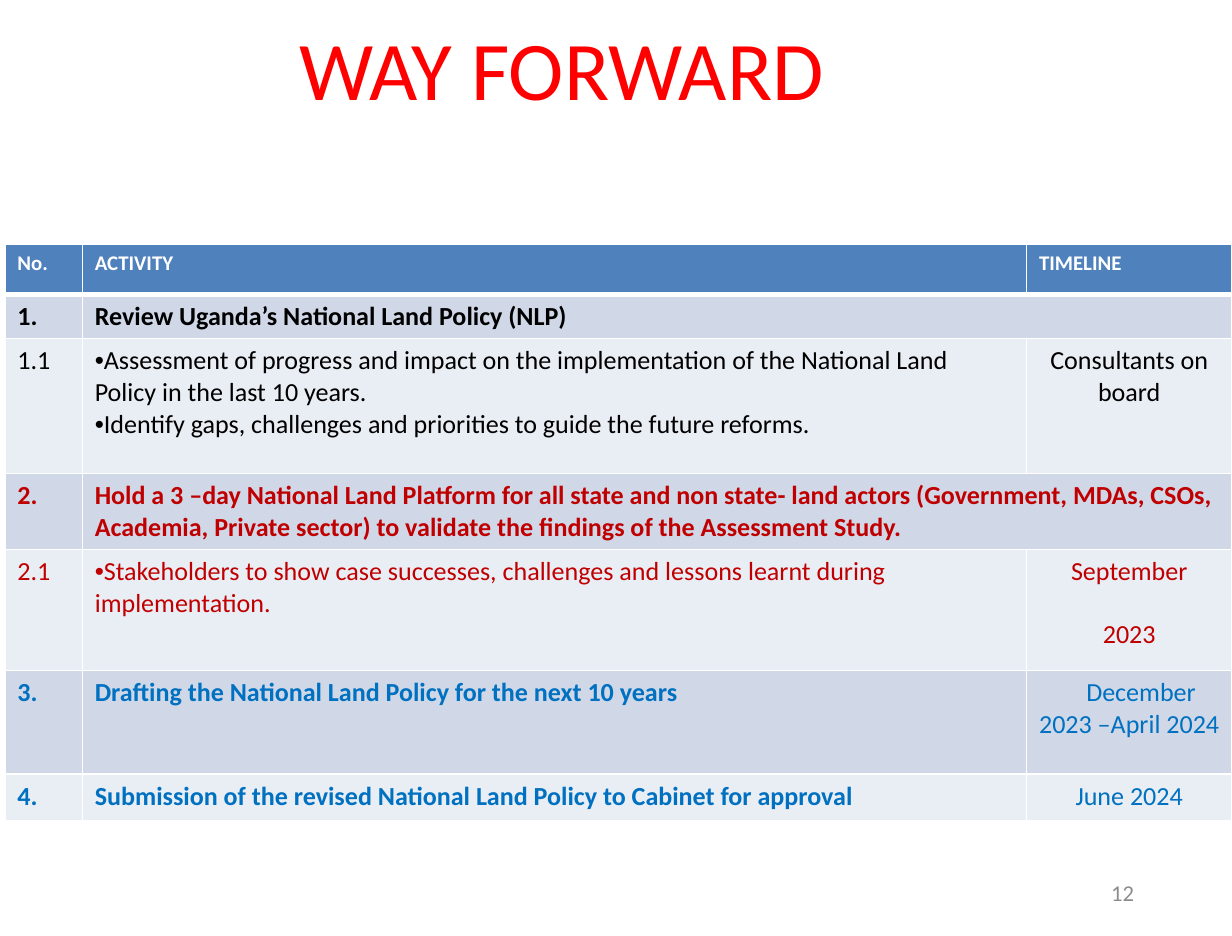
from lxml.etree import SubElement
from pptx import Presentation
from pptx.dml.color import RGBColor
from pptx.enum.text import MSO_ANCHOR as Anchor, PP_ALIGN as Align
from pptx.oxml.ns import qn
from pptx.util import Cm, Pt


def color(value):
    return RGBColor.from_string(value)


def write(paragraph, text, size=15, fill="000000", bold=False, align=Align.LEFT,
          before=0, indent=0, bullet=None):
    paragraph.alignment = align
    if before:
        paragraph.space_before = Pt(before)
    properties = paragraph._p.get_or_add_pPr()
    if indent:
        properties.set("marL", "0")
        properties.set("indent", str(Cm(indent)))
    if bullet:
        SubElement(properties, qn("a:buFont"), typeface="Arial")
        SubElement(properties, qn("a:buChar"), char=bullet)
    run = paragraph.add_run()
    run.text = text
    run.font.name = "Calibri"
    run.font.size = Pt(size)
    run.font.bold = bold
    run.font.color.rgb = color(fill)


BLACK, RED, BLUE = "000000", "C00000", "0070C0"
HEADER, BANDS = "4F81BD", ("E9EDF4", "D0D8E8")

presentation = Presentation()
presentation.slide_width, presentation.slide_height = Cm(25), Cm(19)
slide = presentation.slides.add_slide(presentation.slide_layouts[5])

title = slide.shapes.title
title.left, title.top, title.width, title.height = Cm(3.23), Cm(0), Cm(16.33), Cm(3)
title.text_frame.vertical_anchor = Anchor.MIDDLE
heading = title.text_frame.paragraphs[0]
heading.line_spacing = 0.9
write(heading, "WAY FORWARD", size=48, fill="FF0000", align=Align.CENTER)

number_box = slide.shapes.add_textbox(Cm(17.65), Cm(17.6), Cm(5.61), Cm(1.02))
number_box.text_frame.word_wrap = True
number_box.text_frame.vertical_anchor = Anchor.MIDDLE
write(number_box.text_frame.paragraphs[0], "12", size=13, fill="8C8C8C", align=Align.RIGHT)

activities = [
    ("1.", ["Review Uganda’s National Land Policy (NLP)"], [], BLACK),
    ("1.1", ["Assessment of progress and impact on the implementation of the National Land "
             "Policy in the last 10 years.",
             "Identify gaps, challenges and priorities to guide the future reforms."],
     ["Consultants on board"], BLACK),
    ("2.", ["Hold a 3 –day National Land Platform for all state and non state- land actors "
            "(Government, MDAs, CSOs, Academia, Private sector) to validate the findings of "
            "the Assessment Study."], [], RED),
    ("2.1", ["Stakeholders to show case successes, challenges and lessons learnt during "
             "implementation."], ["September", "2023"], RED),
    ("3.", ["Drafting the National Land Policy for the next 10 years"],
     ["December 2023 –April 2024"], BLUE),
    ("4.", ["Submission of the revised National Land Policy to Cabinet for approval"],
     ["June 2024"], BLUE),
]
column_widths = [1.57, 19.16, 4.17]
row_heights = [1.02, 0.86, 2.74, 1.54, 2.46, 2.1, 0.96]

table = slide.shapes.add_table(len(row_heights), len(column_widths), Cm(0.1), Cm(4.96),
                               Cm(sum(column_widths)), Cm(sum(row_heights))).table
for column, width in zip(table.columns, column_widths):
    column.width = Cm(width)
for row, height in zip(table.rows, row_heights):
    row.height = Cm(height)

for row_index, row in enumerate(table.rows):
    for cell in row.cells:
        cell_properties = cell._tc.get_or_add_tcPr()
        for side in "LRTB":
            header_edge = (row_index, side) in ((0, "B"), (1, "T"))
            line = SubElement(cell_properties, qn("a:ln" + side),
                              w=str(Pt(3 if header_edge else 1)))
            line_fill = SubElement(line, qn("a:solidFill"))
            SubElement(line_fill, qn("a:srgbClr"), val="FFFFFF")
        cell.fill.solid()
        cell.fill.fore_color.rgb = color(BANDS[row_index % 2] if row_index else HEADER)

for cell, label in zip(table.rows[0].cells, ["No.", "ACTIVITY", "TIMELINE"]):
    write(cell.text_frame.paragraphs[0], label, size=12, fill="FFFFFF", bold=True)

for row_index, (number, tasks, timeline, ink) in enumerate(activities, 1):
    number_cell, task_cell, time_cell = table.rows[row_index].cells
    main = number.endswith(".")
    if not timeline:
        task_cell.merge(time_cell)
    write(number_cell.text_frame.paragraphs[0], number, fill=ink, bold=main)
    for index, task in enumerate(tasks):
        frame = task_cell.text_frame
        paragraph = frame.add_paragraph() if index else frame.paragraphs[0]
        write(paragraph, task, fill=ink, bold=main,
              indent=0 if main else -0.79, bullet=None if main else "•")
    for index, text in enumerate(timeline):
        frame = time_cell.text_frame
        paragraph = frame.add_paragraph() if index else frame.paragraphs[0]
        write(paragraph, text, fill=ink, align=Align.CENTER, before=18 * index,
              indent=0.48 if text.startswith("December") else 0)

presentation.save("out.pptx")
